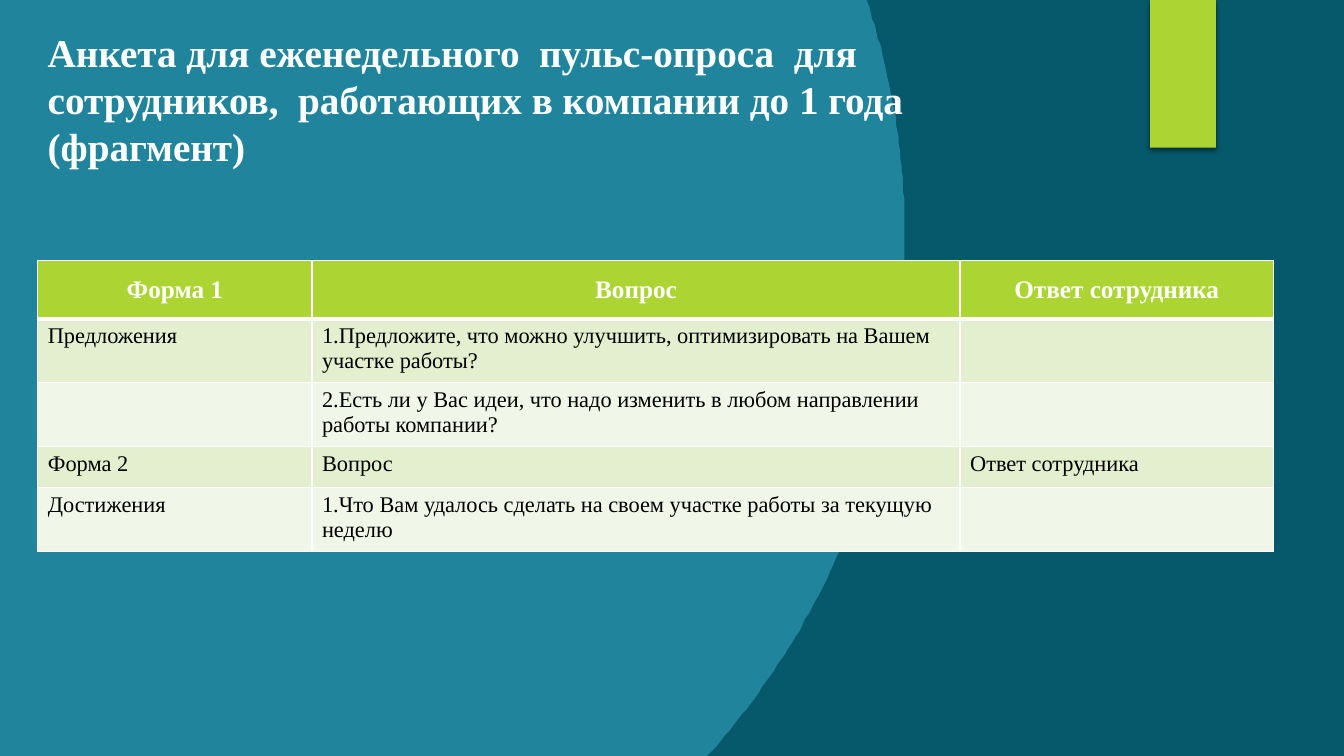
"""Build the slide with the weekly pulse survey form."""
from math import asin, cos, sin

from lxml.etree import SubElement
from pptx import Presentation
from pptx.dml.color import RGBColor
from pptx.enum.shapes import MSO_SHAPE
from pptx.enum.text import MSO_ANCHOR, PP_ALIGN
from pptx.oxml.ns import qn
from pptx.util import Pt

WIDTH, HEIGHT = 960, 540
FONT = "Times New Roman"
DARK, TEAL, LIME, WHITE, BLACK = "06586B", "1F849C", "ACD433", "FFFFFF", "000000"
BANDS = ("E3EFCE", "F1F7E8")

TITLE = ("Анкета для еженедельного  пульс-опроса  для сотрудников,  "
         "работающих в компании до 1 года (фрагмент)")
COLUMNS = (195.84, 462.96, 223.92)
ROWS = (
    ("Форма 1", "Вопрос", "Ответ сотрудника"),
    ("Предложения", "1.Предложите, что можно улучшить, оптимизировать "
     "на Вашем участке работы?", ""),
    ("", "2.Есть ли у Вас идеи, что надо изменить в любом направлении "
     "работы компании?", ""),
    ("Форма 2", "Вопрос", "Ответ сотрудника"),
    ("Достижения", "1.Что Вам удалось сделать на своем участке работы "
     "за текущую неделю", ""),
)


def rgb(color):
    return RGBColor.from_string(color)


def paint(fill, color):
    fill.solid()
    fill.fore_color.rgb = rgb(color)


def write(tf, text, size=16, color=BLACK, bold=False, align=PP_ALIGN.LEFT, spacing=None):
    p = tf.paragraphs[0]
    p.alignment = align
    if spacing:
        p.line_spacing = Pt(spacing)
    if text:
        r = p.add_run()
        r.text = text
        r.font.name, r.font.size, r.font.bold = FONT, Pt(size), bold
        r.font.color.rgb = rgb(color)


class SlideBuilder:
    def __init__(self, prs):
        self.s = prs.slides.add_slide(prs.slide_layouts[6])

    def background(self, color):
        paint(self.s.background.fill, color)

    def disc(self, cx, cy, radius, color, steps=120):
        start, end = asin(-cy / radius), asin((HEIGHT - cy) / radius)
        angles = [start + (end - start) * i / steps for i in range(steps + 1)]
        arc = [(cx + radius * cos(a), cy + radius * sin(a)) for a in angles]
        builder = self.s.shapes.build_freeform(0, 0, scale=Pt(1))
        builder.add_line_segments(arc + [(0, HEIGHT)], close=True)
        sp = builder.convert_to_shape()
        sp.shadow.inherit = False
        paint(sp.fill, color)
        sp.line.fill.background()

    def ribbon(self, x, y, w, h, color):
        sp = self.s.shapes.add_shape(MSO_SHAPE.RECTANGLE, Pt(x), Pt(y), Pt(w), Pt(h))
        paint(sp.fill, color)
        sp.line.fill.background()
        sp.shadow.inherit = False
        effects = sp._element.spPr.find(qn("a:effectLst"))
        shadow = SubElement(effects, qn("a:outerShdw"), blurRad=str(Pt(3)),
                            dist=str(Pt(2)), dir="5400000", rotWithShape="0")
        tint = SubElement(shadow, qn("a:srgbClr"), val=BLACK)
        SubElement(tint, qn("a:alpha"), val="45000")

    def text(self, x, y, w, h, text, **style):
        tf = self.s.shapes.add_textbox(Pt(x), Pt(y), Pt(w), Pt(h)).text_frame
        tf.word_wrap = True
        write(tf, text, **style)

    def borders(self, cell, **widths):
        tc_pr = cell._tc.get_or_add_tcPr()
        for side in "LRTB":
            ln = SubElement(tc_pr, qn(f"a:ln{side}"), w=str(Pt(widths.get(side, 1))))
            fill = SubElement(ln, qn("a:solidFill"))
            SubElement(fill, qn("a:srgbClr"), val=WHITE)

    def table(self, x, y, rows, columns, header_height, row_height):
        height = header_height + row_height * (len(rows) - 1)
        table = self.s.shapes.add_table(len(rows), len(columns), Pt(x), Pt(y),
                                        Pt(sum(columns)), Pt(height)).table
        for column, width in zip(table.columns, columns):
            column.width = Pt(width)
        for i, texts in enumerate(rows):
            table.rows[i].height = Pt(row_height if i else header_height)
            for j, text in enumerate(texts):
                cell = table.cell(i, j)
                if i == 0:
                    self.borders(cell, B=3)
                    paint(cell.fill, LIME)
                    cell.vertical_anchor = MSO_ANCHOR.MIDDLE
                    write(cell.text_frame, text, size=18, color=WHITE, bold=True,
                          align=PP_ALIGN.CENTER)
                else:
                    self.borders(cell, T=3 if i == 1 else 1)
                    paint(cell.fill, BANDS[(i - 1) % 2])
                    write(cell.text_frame, text)


def main():
    prs = Presentation()
    prs.slide_width, prs.slide_height = Pt(WIDTH), Pt(HEIGHT)
    slide = SlideBuilder(prs)
    slide.background(DARK)
    slide.disc(95, 171.5, 551.5, TEAL)
    slide.ribbon(821.5, 0, 47, 105.5, LIME)
    slide.text(27, 16.5, 670, 122.5, TITLE, size=28, color=WHITE, bold=True, spacing=33.6)
    slide.table(27, 186, ROWS, COLUMNS, header_height=41.75, row_height=29.2)
    prs.save("out.pptx")


if __name__ == "__main__":
    main()
